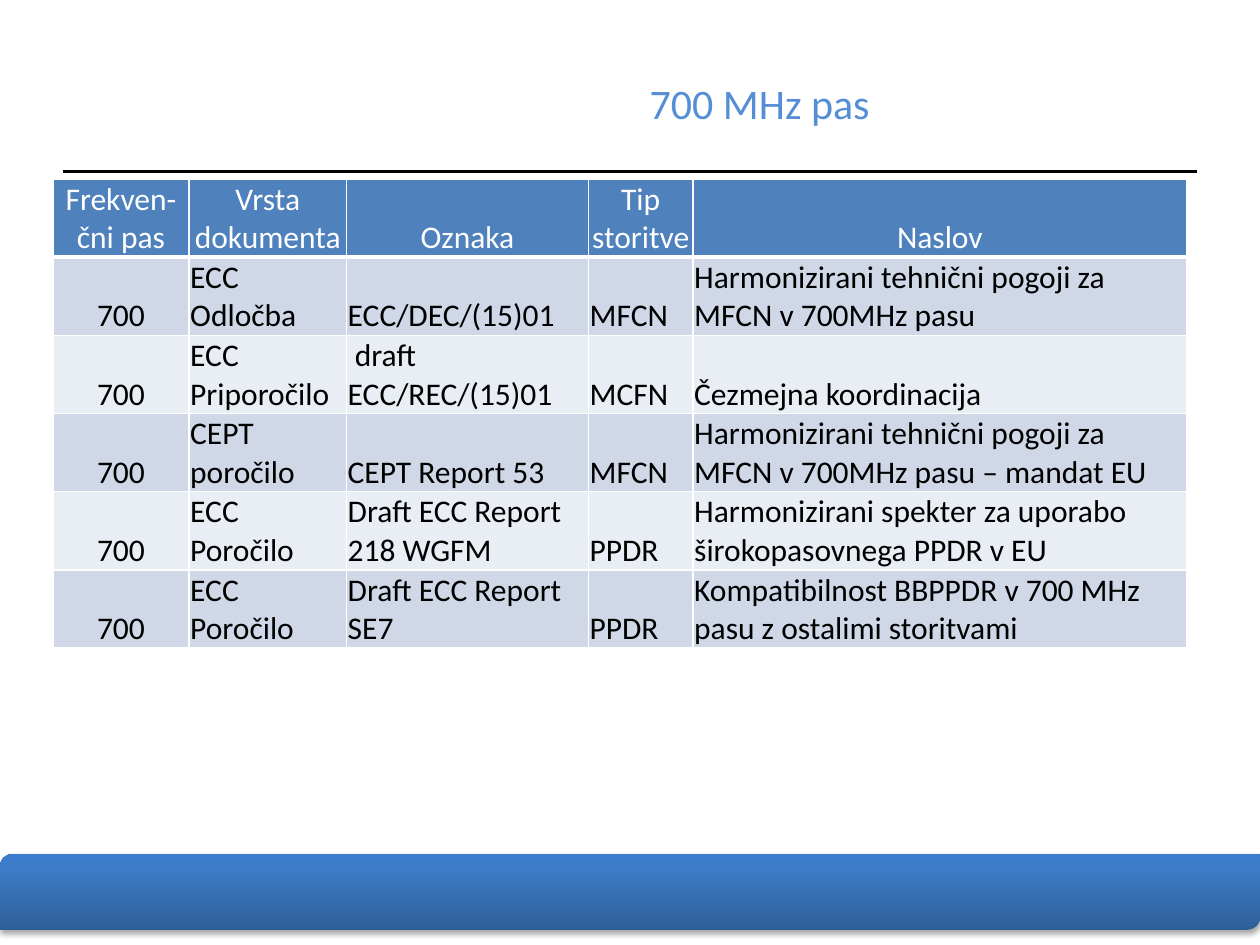
from typing import NamedTuple

from lxml import etree
from pptx import Presentation
from pptx.dml.color import RGBColor
from pptx.enum.shapes import MSO_CONNECTOR, MSO_SHAPE
from pptx.enum.text import MSO_ANCHOR, PP_ALIGN
from pptx.oxml.ns import qn
from pptx.util import Inches, Pt

CENTER, LEFT = PP_ALIGN.CENTER, PP_ALIGN.LEFT
MIDDLE, BOTTOM = MSO_ANCHOR.MIDDLE, MSO_ANCHOR.BOTTOM
BAR_SHAPE = MSO_SHAPE.ROUND_2_DIAG_RECTANGLE
STRAIGHT = MSO_CONNECTOR.STRAIGHT

COLORS = {
    "title": "558ED5", "header": "4F81BD", "odd": "D0D8E8", "even": "E9EDF4",
    "white": "FFFFFF", "black": "000000",
}
BAR_STOPS = [(0, "2F5F99"), (80, "3D7CC7"), (100, "3A7CCB")]
ROW_HEIGHT = 0.61


class Column(NamedTuple):
    heading: str
    width: float
    align: PP_ALIGN = LEFT


class Document(NamedTuple):
    band: str
    kind: str
    label: str
    service: str
    title: str


COLUMNS = [
    Column("Frekven-čni pas", 1.08, CENTER),
    Column("Vrsta dokumenta", 1.25),
    Column("Oznaka", 1.92),
    Column("Tip storitve", 0.83),
    Column("Naslov", 3.92),
]
DOCUMENTS = [
    Document("700", "ECC Odločba", "ECC/DEC/(15)01", "MFCN",
             "Harmonizirani tehnični pogoji za MFCN v 700MHz pasu"),
    Document("700", "ECC Priporočilo", " draft ECC/REC/(15)01", "MCFN",
             "Čezmejna koordinacija"),
    Document("700", "CEPT poročilo", "CEPT Report 53", "MFCN",
             "Harmonizirani tehnični pogoji za MFCN v 700MHz pasu – mandat EU"),
    Document("700", "ECC Poročilo", "Draft ECC Report 218 WGFM", "PPDR",
             "Harmonizirani spekter za uporabo širokopasovnega PPDR v EU"),
    Document("700", "ECC Poročilo", "Draft ECC Report SE7", "PPDR",
             "Kompatibilnost BBPPDR v 700 MHz pasu z ostalimi storitvami"),
]


def rgb(name: str) -> RGBColor:
    return RGBColor.from_string(COLORS[name])


def add_xml(parent, tag: str, **attrs):
    return etree.SubElement(parent, qn(tag), {k: str(v) for k, v in attrs.items()})


def write(tf, text: str, *, size: float, color: str, align=LEFT) -> None:
    p = tf.paragraphs[0]
    p.alignment = align
    r = p.add_run()
    r.text = text
    r.font.name = "Calibri"
    r.font.size = Pt(size)
    r.font.bold = False
    r.font.color.rgb = rgb(color)


def add_footer_bar(s) -> None:
    bar = s.shapes.add_shape(BAR_SHAPE, 0, Inches(6.78), Inches(10), Inches(0.6))
    bar.line.fill.background()
    bar.fill.gradient()
    bar.fill.gradient_angle = 90
    stops = bar.fill._fill._gradFill.find(qn("a:gsLst"))
    for stop in list(stops):
        stops.remove(stop)
    for position, color in BAR_STOPS:
        add_xml(add_xml(stops, "a:gs", pos=position * 1000), "a:srgbClr", val=color)
    effects = add_xml(bar._element.spPr, "a:effectLst")
    shadow = add_xml(effects, "a:outerShdw", blurRad=Pt(3.1), dist=Pt(1.8),
                     dir=5400000, rotWithShape=0)
    shadow_color = add_xml(shadow, "a:srgbClr", val=COLORS["black"])
    add_xml(shadow_color, "a:alpha", val=35000)


def add_rule(s) -> None:
    rule = s.shapes.add_connector(STRAIGHT, Inches(0.5), Inches(1.36),
                                  Inches(9.5), Inches(1.36))
    rule.line.color.rgb = rgb("black")
    rule.line.width = Pt(0)
    add_xml(rule._element.spPr, "a:effectLst")


def add_title(s, text: str) -> None:
    title = s.shapes.title
    title.left, title.top = Inches(2.56), Inches(0.39)
    title.width, title.height = Inches(6.94), Inches(0.85)
    title.text_frame.vertical_anchor = MIDDLE
    write(title.text_frame, text, size=24, color="title", align=CENTER)


def format_cell(cell, text: str, *, fill: str, color: str, align, top: float,
                bottom: float) -> None:
    cell.margin_left = cell.margin_right = cell.margin_top = Inches(0.01)
    cell.margin_bottom = 0
    cell.vertical_anchor = BOTTOM
    tc_pr = cell._tc.get_or_add_tcPr()
    for side, width in (("L", 1), ("R", 1), ("T", top), ("B", bottom)):
        border = add_xml(tc_pr, f"a:ln{side}", w=Pt(width))
        add_xml(add_xml(border, "a:solidFill"), "a:srgbClr", val=COLORS["white"])
    cell.fill.solid()
    cell.fill.fore_color.rgb = rgb(fill)
    write(cell.text_frame, text, size=18, color=color, align=align)


def add_document_table(s) -> None:
    count = len(DOCUMENTS) + 1
    table = s.shapes.add_table(count, len(COLUMNS), Inches(0.42), Inches(1.42),
                               Inches(9), Inches(ROW_HEIGHT * count)).table
    for i, column in enumerate(COLUMNS):
        table.columns[i].width = Inches(column.width)
        format_cell(table.cell(0, i), column.heading, fill="header",
                    color="white", align=CENTER, top=1, bottom=3)
    for row, document in enumerate(DOCUMENTS, 1):
        for i, (column, text) in enumerate(zip(COLUMNS, document)):
            format_cell(table.cell(row, i), text, fill="odd" if row % 2 else "even",
                        color="black", align=column.align,
                        top=3 if row == 1 else 1, bottom=1)


def main() -> None:
    prs = Presentation()
    prs.slide_width, prs.slide_height = Inches(10), Inches(7.5)
    s = prs.slides.add_slide(prs.slide_layouts[5])
    add_footer_bar(s)
    add_rule(s)
    add_title(s, "700 MHz pas")
    add_document_table(s)
    prs.save("out.pptx")


if __name__ == "__main__":
    main()
